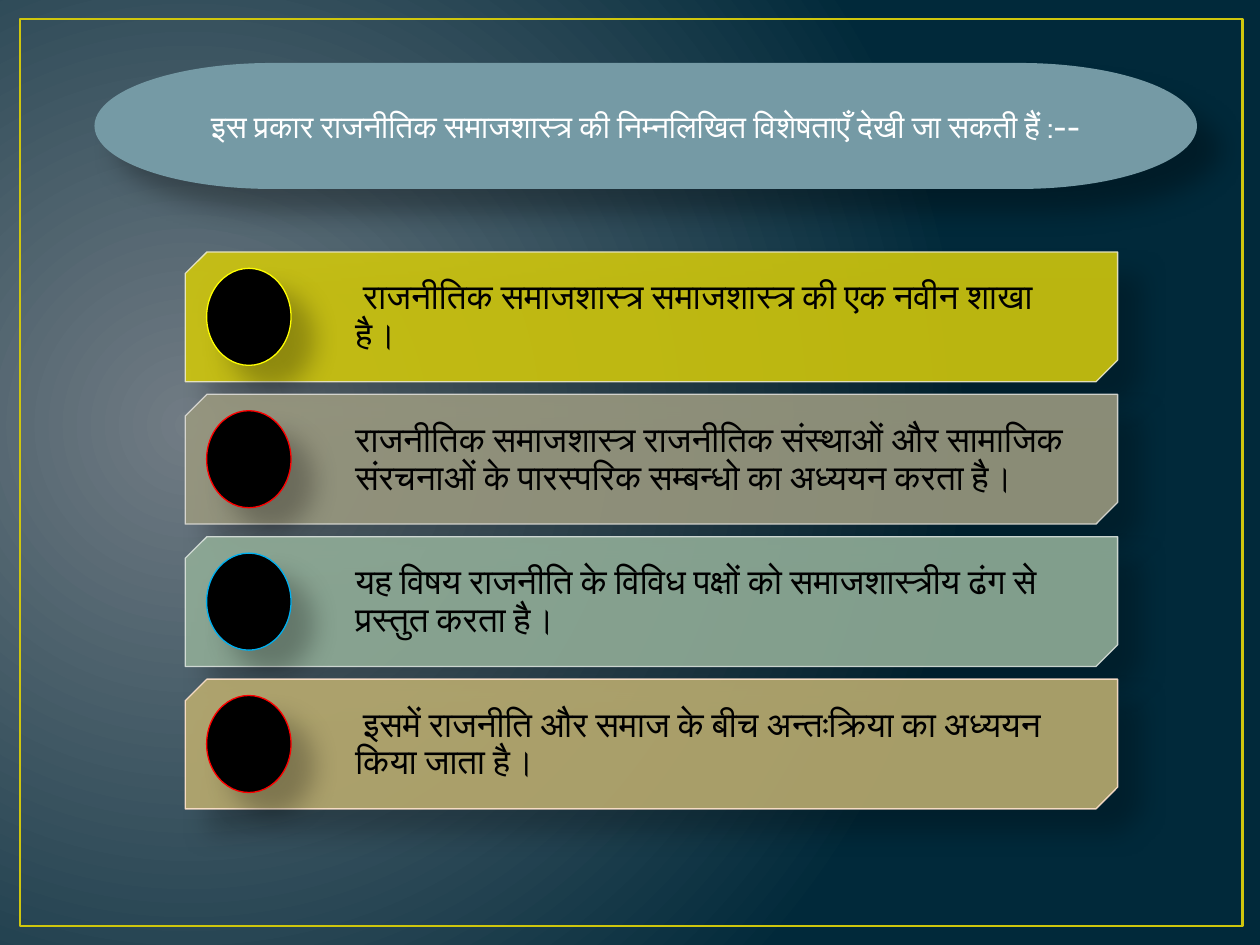
from lxml import etree
from pptx import Presentation
from pptx import util as u
from pptx.dml.color import RGBColor
from pptx.enum import shapes, text
from pptx.oxml import parse_xml
from pptx.oxml.ns import nsdecls, qn

COLORS = {
    "glow": "717C84", "night": "01293A", "frame": "CFC60D",
    "title": "759AA5", "white": "FFFFFF", "black": "000000",
}
FONT = "Cabin"
TITLE = "इस प्रकार राजनीतिक समाजशास्त्र की निम्नलिखित विशेषताएँ देखी जा सकती हैं :--"

# Wording, bar fill, bar outline, dot outline
FEATURES = [
    (" राजनीतिक समाजशास्त्र समाजशास्त्र की एक नवीन शाखा है।",
     "CFC60D", "EDEACC", "FFFF00"),
    ("राजनीतिक समाजशास्त्र राजनीतिक संस्थाओं और सामाजिक संरचनाओं के पारस्परिक सम्बन्धो का अध्ययन करता है।",
     "99987F", "DEDDD8", "FF0000"),
    ("यह विषय राजनीति के विविध पक्षों को समाजशास्त्रीय ढंग से प्रस्तुत करता है।",
     "90AC97", "DBE3DD", "00B0F0"),
    (" इसमें राजनीति और समाज के बीच अन्तःक्रिया का अध्ययन किया जाता है।",
     "B9AB6F", "FFE3CD", "FF0000"),
]
FIRST_TOP, ROW_PITCH = 2.0, 1.13
BAR_LEFT, BAR_LENGTH, BAR_DEPTH = 1.47, 7.4, 1.03


def paint_background(slide):
    """Radial gradient centred on the left side."""
    slide.background.fill.solid()
    properties = slide.background._cSld.find(qn("p:bg")).find(qn("p:bgPr"))
    gradient = parse_xml(
        f'<a:gradFill {nsdecls("a")} rotWithShape="1"><a:gsLst>'
        f'<a:gs pos="0"><a:srgbClr val="{COLORS["glow"]}"/></a:gs>'
        f'<a:gs pos="100000"><a:srgbClr val="{COLORS["night"]}"/></a:gs></a:gsLst>'
        '<a:path path="circle"><a:fillToRect l="15000" t="50000" r="85000" b="60000"/>'
        '</a:path></a:gradFill>')
    properties.replace(properties.find(qn("a:solidFill")), gradient)


def set_alpha(fill, percent):
    color = fill._xPr.find(qn("a:solidFill")).find(qn("a:srgbClr"))
    etree.SubElement(color, qn("a:alpha")).set("val", str(percent * 1000))


def add_shadow(shape, percent):
    """Soft shadow to the lower right."""
    effects = shape._element.spPr.find(qn("a:effectLst"))
    effects.append(parse_xml(
        f'<a:outerShdw {nsdecls("a")} blurRad="{u.Pt(15)}" dist="{u.Pt(18)}" '
        'dir="2700000" algn="tl" rotWithShape="0">'
        f'<a:srgbClr val="{COLORS["black"]}"><a:alpha val="{percent * 1000}"/></a:srgbClr>'
        '</a:outerShdw>'))


def add_shape(slide, kind, box, fill=None, line=None, width=0.75, alpha=None, shadow=None):
    shape = slide.shapes.add_shape(kind, *map(u.Inches, box))
    shape.shadow.inherit = False
    for paint, color in ((shape.fill, fill), (shape.line.fill, line)):
        if color is None:
            paint.background()
            continue
        paint.solid()
        paint.fore_color.rgb = RGBColor.from_string(color)
        if alpha:
            set_alpha(paint, alpha)
    if line:
        shape.line.width = u.Pt(width)
    if shadow:
        add_shadow(shape, shadow)
    return shape


def write_text(shape, wording, size, color, align):
    frame = shape.text_frame
    frame.word_wrap = True
    frame.vertical_anchor = text.MSO_ANCHOR.MIDDLE
    paragraph = frame.paragraphs[0]
    paragraph.alignment = align
    run = paragraph.add_run()
    run.text = wording
    run.font.size = u.Pt(size)
    run.font.name = FONT
    run.font.color.rgb = RGBColor.from_string(color)
    etree.SubElement(run.font._element, qn("a:cs")).set("typeface", FONT)
    return paragraph


def add_feature(slide, top, wording, fill, outline, dot_outline):
    """A snipped bar with its wording and a round marker."""
    # The bar is an upright shape turned a quarter about its centre
    shift = (BAR_LENGTH - BAR_DEPTH) / 2
    bar = add_shape(slide, shapes.MSO_SHAPE.SNIP_2_DIAG_RECTANGLE,
                    (BAR_LEFT + shift, top - shift, BAR_DEPTH, BAR_LENGTH),
                    fill, outline, alpha=90, shadow=26)
    bar.rotation = 90

    label = slide.shapes.add_textbox(
        *map(u.Inches, (BAR_LEFT + 0.08, top + 0.09, 7.23, 0.86)))
    frame = label.text_frame
    frame.margin_left = frame.margin_right = u.Inches(0.27)
    frame.margin_top = frame.margin_bottom = u.Inches(0.14)
    paragraph = write_text(label, wording, 20, COLORS["black"], text.PP_ALIGN.LEFT)
    paragraph.line_spacing = 0.9
    paragraph._p.get_or_add_pPr().set("marL", str(u.Inches(1)))

    add_shape(slide, shapes.MSO_SHAPE.OVAL, (BAR_LEFT + 0.17, top + 0.13, 0.67, 0.77),
              COLORS["black"], dot_outline, shadow=26)


def main():
    presentation = Presentation()
    presentation.slide_width = u.Inches(10)
    presentation.slide_height = u.Inches(7.5)
    slide = presentation.slides.add_slide(presentation.slide_layouts[6])

    # Background and frame
    paint_background(slide)
    add_shape(slide, shapes.MSO_SHAPE.RECTANGLE, (0.16, 0.15, 9.7, 7.2),
              line=COLORS["frame"], width=1.5)

    # List of features
    for row, feature in enumerate(FEATURES):
        add_feature(slide, FIRST_TOP + row * ROW_PITCH, *feature)

    # Title
    title = add_shape(slide, shapes.MSO_SHAPE.FLOWCHART_TERMINATOR, (0.75, 0.5, 8.75, 1),
                      COLORS["title"], shadow=30)
    write_text(title, TITLE, 18, COLORS["white"], text.PP_ALIGN.CENTER)

    presentation.save("out.pptx")


if __name__ == "__main__":
    main()
